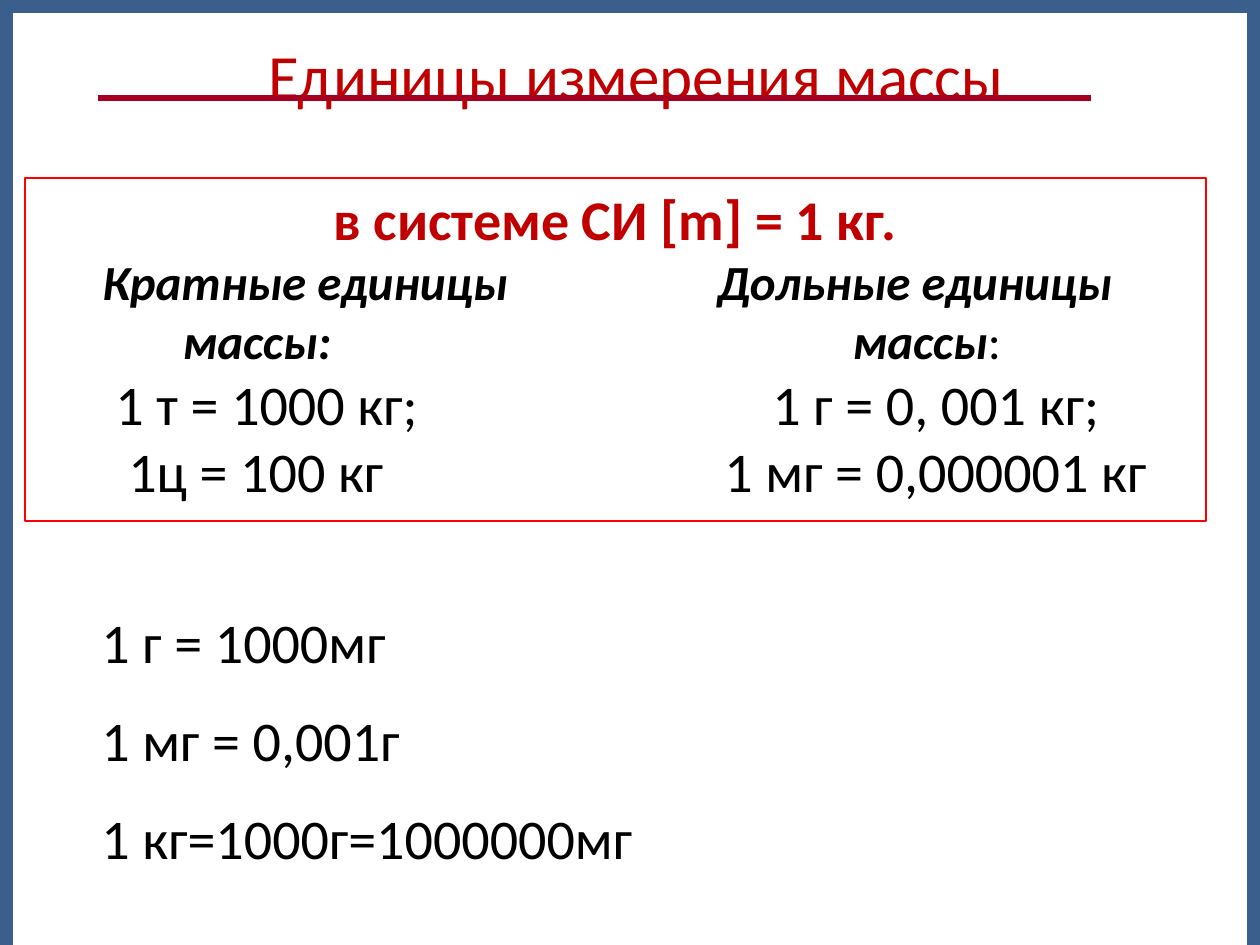
from lxml import etree
from pptx import Presentation
from pptx import util as u
from pptx.dml.color import RGBColor
from pptx.enum import shapes, text
from pptx.oxml.ns import qn

FONT = "Calibri"
COLORS = {"heading": "C00000", "body": "000000", "rule": "A50021",
          "box": "FF0000", "frame": "3A5F8C"}

TITLE = "Единицы измерения массы"
SI_UNIT = "в системе СИ [m] = 1 кг."
BOLD_ITALIC = {"size": 28, "bold": True, "italic": True}
PLAIN = {"size": 32}
UNIT_ROWS = [
    ((65, 680), [("\tКратные единицы\tДольные единицы", BOLD_ITALIC)]),
    ((145, 815), [("\tмассы:\tмассы", BOLD_ITALIC), (":", {"size": 28})]),
    ((78, 735), [("\t1 т = 1000 кг;\t1 г = 0, 001 кг;", PLAIN)]),
    ((91, 687), [("\t1ц = 100 кг\t1 мг = 0,000001 кг", PLAIN)]),
]
CONVERSIONS = [("1 г = 1000мг", 451), ("1 мг = 0,001г", 451),
               ("1 кг=1000г=1000000мг", 581)]
FIRST_TOP, PITCH = 601, 98


def px(n):
    return u.Emu(round(n * 914400 / 126))


def color(key):
    return RGBColor.from_string(COLORS[key])


def add_run(paragraph, words, size, key="body", bold=False, italic=False):
    run = paragraph.add_run()
    run.text = words
    font = run.font
    font.name, font.size = FONT, u.Pt(size)
    font.bold, font.italic = bold, italic
    font.color.rgb = color(key)


def set_tabs(paragraph, stops):
    tabs = etree.SubElement(paragraph._p.get_or_add_pPr(), qn("a:tabLst"))
    for stop in stops:
        etree.SubElement(tabs, qn("a:tab"), pos=str(px(stop)), algn="l")


def add_outline(slide, place, key, width):
    outline = slide.shapes.add_shape(shapes.MSO_SHAPE.RECTANGLE, *map(px, place))
    outline.shadow.inherit = False
    outline.fill.background()
    outline.line.color.rgb = color(key)
    outline.line.width = u.Pt(width)
    return outline


def main():
    deck = Presentation()
    deck.slide_width, deck.slide_height = px(1260), px(945)
    slide = deck.slides.add_slide(deck.slide_layouts[5])

    units = add_outline(slide, (25, 178, 1181, 343), "box", 0.75).text_frame
    units.word_wrap = True
    units.vertical_anchor = text.MSO_ANCHOR.TOP
    heading = units.paragraphs[0]
    heading.alignment = text.PP_ALIGN.CENTER
    add_run(heading, SI_UNIT, 32, "heading", bold=True)
    for stops, runs in UNIT_ROWS:
        row = units.add_paragraph()
        row.alignment = text.PP_ALIGN.LEFT
        set_tabs(row, stops)
        for words, style in runs:
            add_run(row, words, **style)

    for i, (words, width) in enumerate(CONVERSIONS):
        place = (89, FIRST_TOP + i * PITCH, width, 81)
        conversion = slide.shapes.add_textbox(*map(px, place)).text_frame
        conversion.word_wrap = True
        add_run(conversion.paragraphs[0], words, 32)

    title = slide.shapes.title
    title.left, title.top, title.width, title.height = map(px, (69, 20, 1134, 108))
    title.text_frame.vertical_anchor = text.MSO_ANCHOR.MIDDLE
    title_line = title.text_frame.paragraphs[0]
    title_line.alignment = text.PP_ALIGN.CENTER
    add_run(title_line, TITLE, 36, "heading")

    rule = slide.shapes.add_connector(shapes.MSO_CONNECTOR.STRAIGHT,
                                      *map(px, (98, 98, 1091, 98)))
    rule.line.color.rgb = color("rule")
    rule.line.width = u.Pt(3)
    etree.SubElement(rule._element.spPr, qn("a:effectLst"))

    add_outline(slide, (0, 0, 1260, 965), "frame", 15.25)
    deck.save("out.pptx")


if __name__ == "__main__":
    main()
